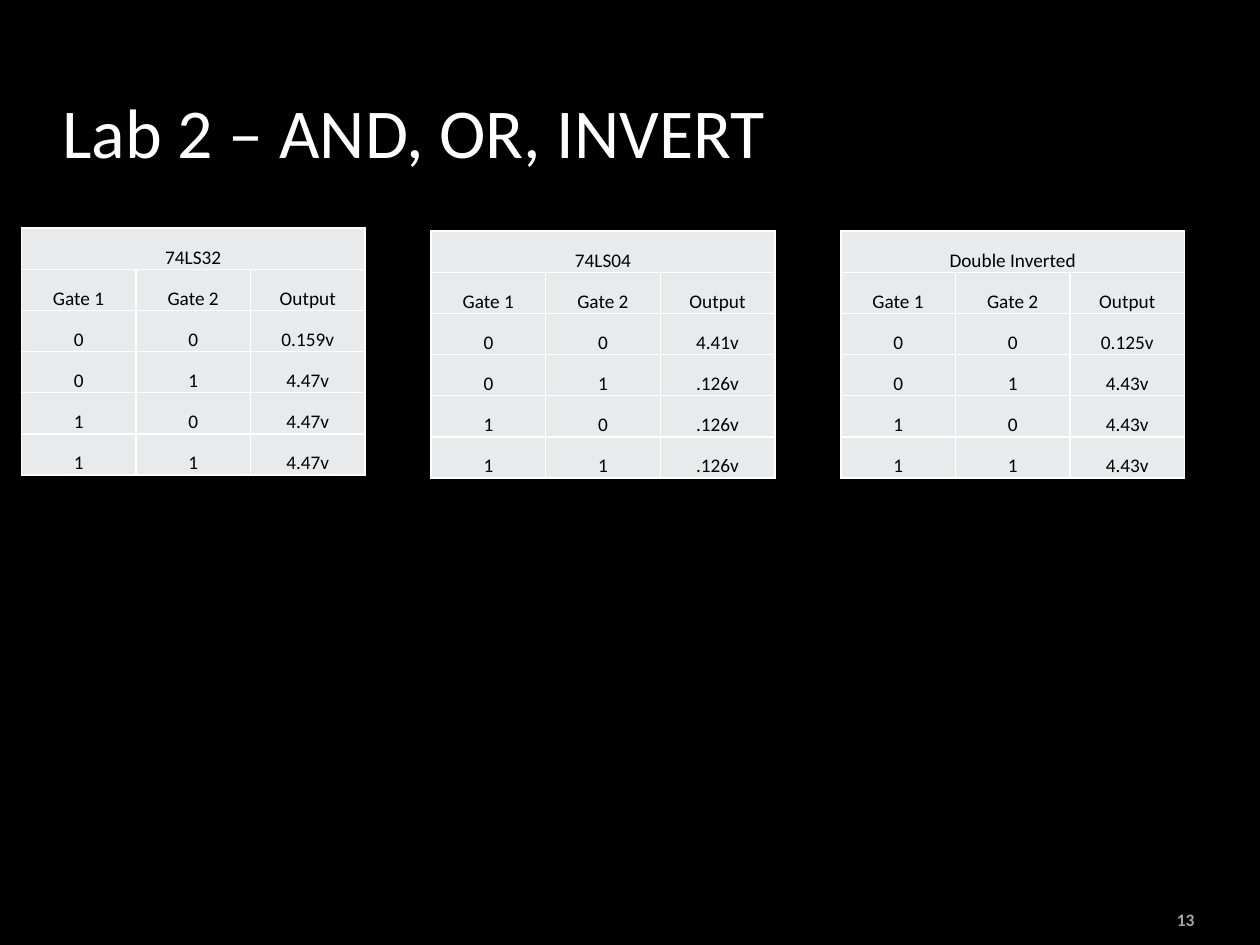
from dataclasses import dataclass

from lxml.etree import SubElement
from pptx import Presentation
from pptx.dml.color import RGBColor
from pptx.enum.text import MSO_ANCHOR, PP_ALIGN
from pptx.oxml import parse_xml
from pptx.oxml.ns import nsdecls, qn
from pptx.util import Cm, Pt


@dataclass(frozen=True)
class Theme:
    font: str = "Calibri"
    background: RGBColor = RGBColor(0x00, 0x00, 0x00)
    heading: RGBColor = RGBColor(0xFF, 0xFF, 0xFF)
    page_number: RGBColor = RGBColor(0xA6, 0xA6, 0xA6)
    cell_fill: RGBColor = RGBColor(0xE9, 0xEA, 0xEC)
    cell_text: RGBColor = RGBColor(0x00, 0x00, 0x00)
    border: RGBColor = RGBColor(0xFF, 0xFF, 0xFF)
    heading_size: int = 40
    cell_size: int = 11
    page_number_size: int = 10


def apply(target, values):
    for name, value in values.items():
        setattr(target, name, value)


class LabSlide:
    def __init__(self, deck, theme):
        self.theme = theme
        self.slide = deck.slides.add_slide(deck.slide_layouts[5])
        fill = self.slide.background.fill
        fill.solid()
        fill.fore_color.rgb = theme.background

    def add_words(self, frame, words, size, color, align, bold=False):
        paragraph = frame.paragraphs[0]
        paragraph.alignment = align
        run = paragraph.add_run()
        run.text = words
        apply(run.font, {"name": self.theme.font, "size": Pt(size), "bold": bold})
        run.font.color.rgb = color
        return paragraph

    def title(self, words, left, top, width, height):
        heading = self.slide.shapes.title
        apply(heading, {"left": Cm(left), "top": Cm(top),
                        "width": Cm(width), "height": Cm(height)})
        heading.text_frame.vertical_anchor = MSO_ANCHOR.BOTTOM
        paragraph = self.add_words(heading.text_frame, words, self.theme.heading_size,
                                   self.theme.heading, PP_ALIGN.LEFT)
        paragraph.space_before = Pt(4)

    def page_number(self, number, left, top, width, height):
        corner = self.slide.shapes.add_textbox(Cm(left), Cm(top), Cm(width), Cm(height))
        apply(corner.text_frame, {"word_wrap": True, "vertical_anchor": MSO_ANCHOR.MIDDLE})
        self.add_words(corner.text_frame, number, self.theme.page_number_size,
                       self.theme.page_number, PP_ALIGN.RIGHT, bold=True)

    def cell_borders(self, cell):
        properties = cell._tc.get_or_add_tcPr()
        for position, side in enumerate(("lnL", "lnR", "lnT", "lnB")):
            line = parse_xml(f'<a:{side} {nsdecls("a")} w="{int(Pt(1))}"/>')
            solid = SubElement(line, qn("a:solidFill"))
            SubElement(solid, qn("a:srgbClr"), val=str(self.theme.border))
            properties.insert(position, line)

    def truth_table(self, gate, readings, left, top, column=2.31, row=0.83):
        inputs = [(a, b) for a in "01" for b in "01"]
        rows = [(gate, "", ""), ("Gate 1", "Gate 2", "Output")]
        rows += [(*pair, reading) for pair, reading in zip(inputs, readings)]
        table = self.slide.shapes.add_table(
            len(rows), 3, Cm(left), Cm(top), Cm(3 * column), Cm(len(rows) * row)).table
        apply(table, {"first_row": False, "horz_banding": False})
        table.cell(0, 0).merge(table.cell(0, 2))
        cell_format = {"vertical_anchor": MSO_ANCHOR.BOTTOM, "margin_left": Cm(0.03),
                       "margin_right": Cm(0.03), "margin_top": Cm(0.03), "margin_bottom": 0}
        for cell, words in zip(table.iter_cells(), sum(rows, ())):
            apply(cell, cell_format)
            cell.fill.solid()
            cell.fill.fore_color.rgb = self.theme.cell_fill
            self.cell_borders(cell)
            if words:
                self.add_words(cell.text_frame, words, self.theme.cell_size,
                               self.theme.cell_text, PP_ALIGN.CENTER)


def main():
    deck = Presentation()
    apply(deck, {"slide_width": Cm(25.4), "slide_height": Cm(19.05)})
    lab = LabSlide(deck, Theme())
    lab.title("Lab 2 – AND, OR, INVERT", 1, 0.64, 21.34, 2.97)
    experiments = [
        ("74LS32", ("0.159v", "4.47v", "4.47v", "4.47v"), 4.6),
        ("74LS04", ("4.41v", ".126v", ".126v", ".126v"), 4.66),
        ("Double Inverted", ("0.125v", "4.43v", "4.43v", "4.43v"), 4.66),
    ]
    for index, (gate, readings, top) in enumerate(experiments):
        lab.truth_table(gate, readings, 0.43 + index * 8.26, top)
    lab.page_number("13", 21.89, 18.19, 2.44, 0.69)
    deck.save("out.pptx")


if __name__ == "__main__":
    main()
